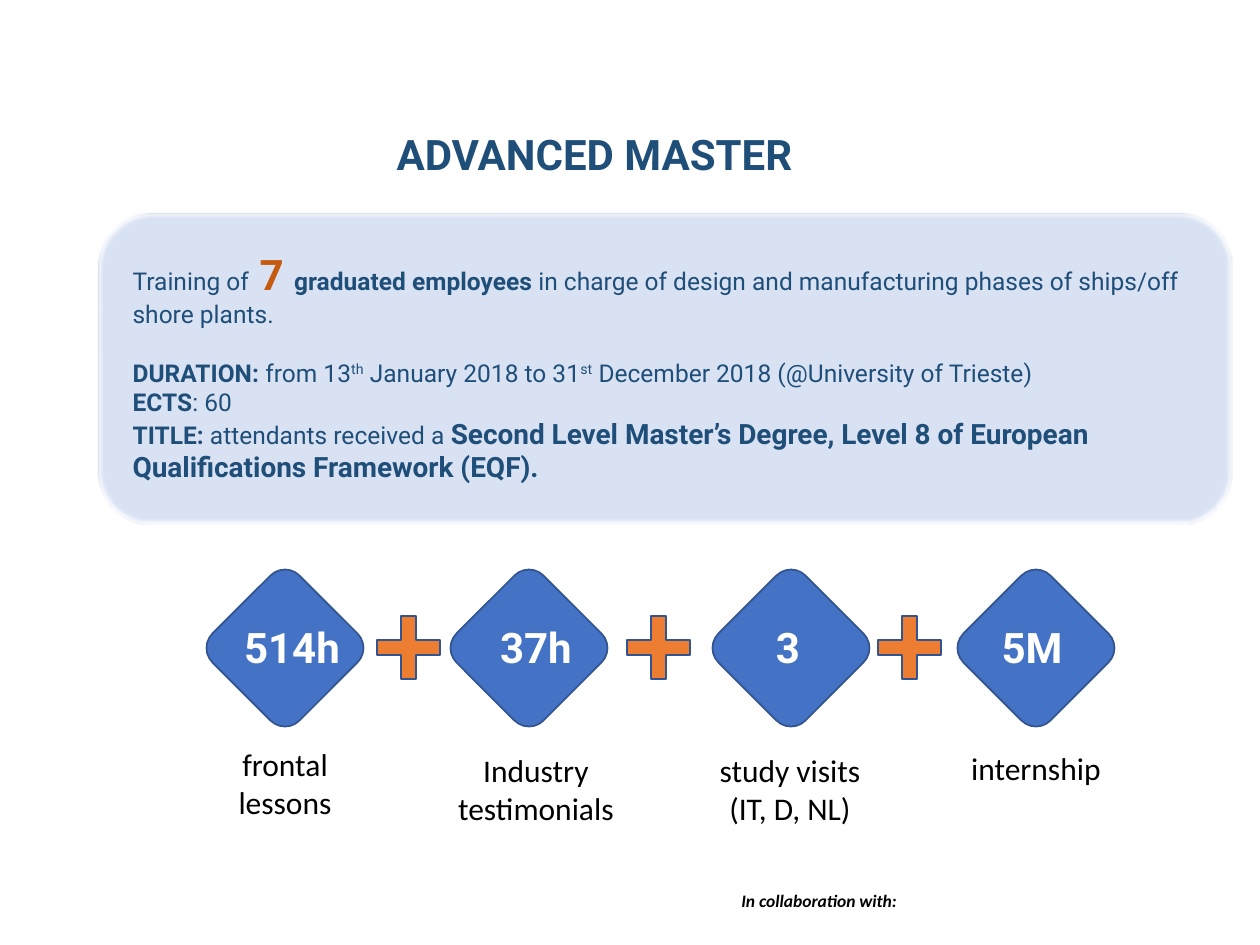
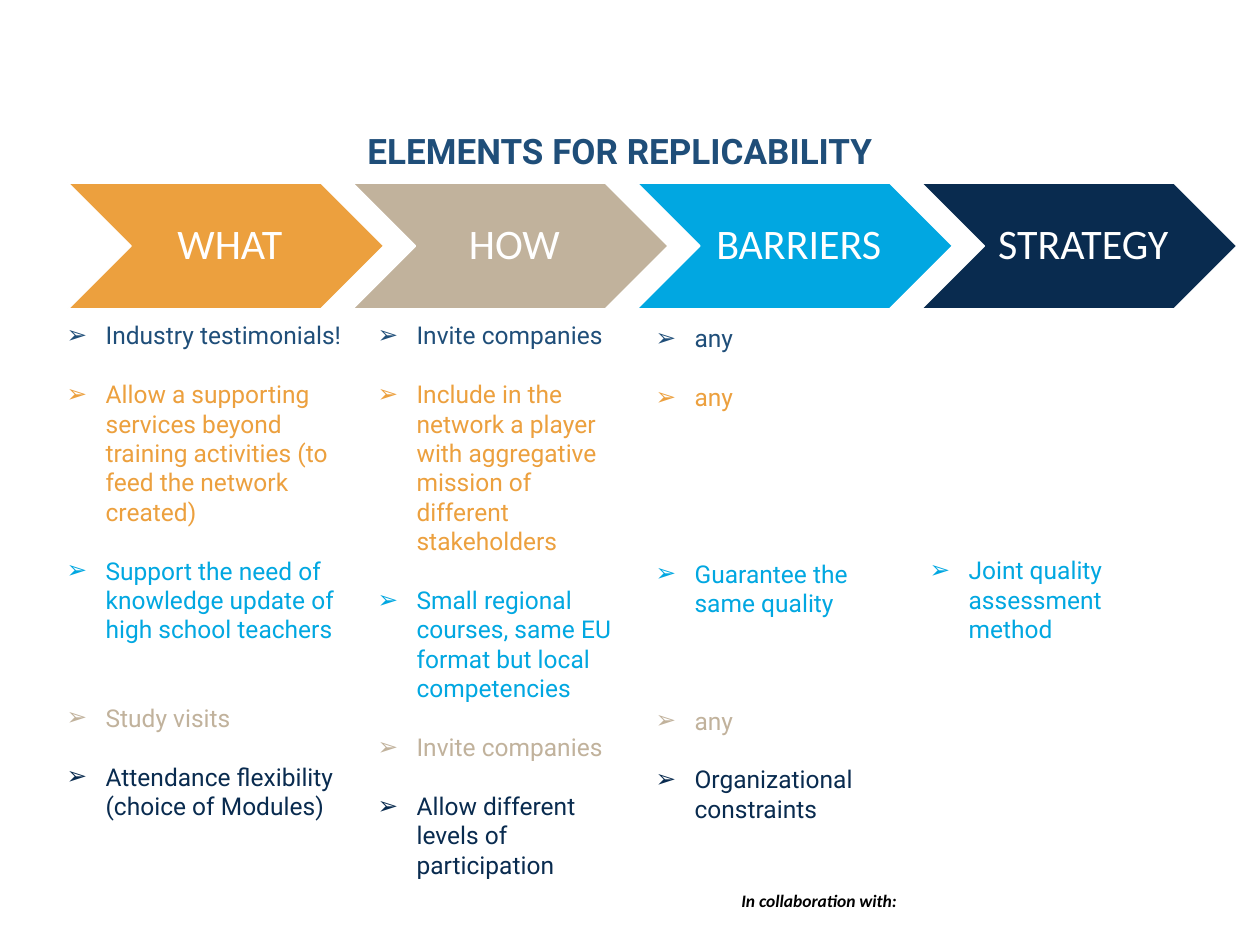
from lxml import etree
from pptx import Presentation
from pptx.dml.color import RGBColor
from pptx.enum.shapes import MSO_SHAPE
from pptx.enum.text import MSO_ANCHOR, MSO_AUTO_SIZE, PP_ALIGN
from pptx.oxml.ns import qn
from pptx.util import Emu, Inches, Pt

ROUNDED, CROSS, CHEVRON = MSO_SHAPE.ROUNDED_RECTANGLE, MSO_SHAPE.CROSS, MSO_SHAPE.CHEVRON
LEFT, CENTER = PP_ALIGN.LEFT, PP_ALIGN.CENTER
TOP, MIDDLE = MSO_ANCHOR.TOP, MSO_ANCHOR.MIDDLE
NO_AUTOFIT = MSO_AUTO_SIZE.NONE

HEADING_FONT, PLAIN_FONT = "Roboto", "Calibri"
BLUE_TEXT, BLUE, OUTLINE = "1F4E79", "4472C4", "325491"
PLUS_ORANGE, COUNT_ORANGE = "ED7D31", "C55A11"
AMBER, SAND, CYAN, NAVY = "ECA03E", "C1B29C", "01A7E1", "092B4F"
WHITE, BLACK = "FFFFFF", "000000"

LINE_HEIGHT = 16.8  # points, one line of 14 pt text
TITLE_AND_BODY, COMPARISON = 1, 4

# style: size, colour, bold
DETAIL_STYLES = {
    "plain": (14, BLUE_TEXT, False),
    "super": (14, BLUE_TEXT, False),
    "bold": (14, BLUE_TEXT, True),
    "large": (16, BLUE_TEXT, True),
    "count": (24, COUNT_ORANGE, True),
}

# blank lines above, then pieces of text with their style
COURSE_DETAILS = [
    (0, [("Training of", "plain"), (" 7 ", "count"), ("graduated employees ", "bold"),
         ("in charge of design and manufacturing phases of ships/off shore plants.",
          "plain")]),
    (1, [("DURATION: ", "bold"), ("from 13", "plain"), ("th", "super"),
         (" January 2018 to 31", "plain"), ("st", "super"),
         (" December 2018 (@University of Trieste)", "plain")]),
    (0, [("ECTS", "bold"), (": 60", "plain")]),
    (0, [("TITLE: ", "bold"), ("attendants received a ", "plain"),
         ("Second Level Master’s Degree, Level 8 of European "
          "Qualifications Framework (EQF).", "large")]),
]

# diamond centre, value, value centre, caption, caption centre, top and width
COURSE_PARTS = [
    (285, "514h", 292, "frontal lessons", 285, 739, 156),
    (529, "37h", 536, "Industry testimonials", 536, 745, 204),
    (791, "3", 788, "study visits (IT, D, NL)", 790, 745, 204),
    (1036, "5M", 1032, "internship", 1036, 743, 204),
]
PLUS_CENTRES = (408, 658, 909)

STEPS = [("WHAT", AMBER), ("HOW", SAND), ("BARRIERS", CYAN), ("STRATEGY", NAVY)]

# box, then items as (blank lines above, text, colour)
COLUMNS = [
    ((54, 314, 312, 518), [
        (0, "Industry testimonials!", BLUE_TEXT),
        (1, "Allow a supporting services beyond training activities "
            "(to feed the network created)", AMBER),
        (1, "Support the need of knowledge update of high school teachers", CYAN),
        (2, "Study visits", SAND),
        (1, "Attendance flexibility (choice of Modules)", NAVY)]),
    ((365, 314, 277, 547), [
        (0, "Invite companies", BLUE_TEXT),
        (1, "Include in the network a player with aggregative mission "
            "of different stakeholders", AMBER),
        (1, "Small regional courses, same EU format but local competencies", CYAN),
        (1, "Invite companies", SAND),
        (1, "Allow different levels of participation", NAVY)]),
    ((643, 317, 277, 518), [
        (0, "any", BLUE_TEXT),
        (1, "any", AMBER),
        (5, "Guarantee the same quality", CYAN),
        (3, "any", SAND),
        (1, "Organizational constraints", NAVY)]),
    ((917, 549, 277, 120), [
        (0, "Joint quality assessment method", CYAN)]),
]


def px(length):
    return Emu(round(length * 914400 / 126))


def color(value):
    return RGBColor.from_string(value)


def format_run(run, size, value, font=HEADING_FONT, bold=False, italic=False):
    run.font.name = font
    run.font.size = Pt(size)
    run.font.color.rgb = color(value)
    run.font.bold = bold
    run.font.italic = italic


def place(shape, box):
    shape.left, shape.top, shape.width, shape.height = map(px, box)


def add_label(slide, box, text, size, value, align=CENTER, **style):
    label = slide.shapes.add_textbox(*map(px, box))
    label.text_frame.word_wrap = True
    paragraph = label.text_frame.paragraphs[0]
    paragraph.text = text
    paragraph.alignment = align
    format_run(paragraph.runs[0], size, value, **style)


def add_filled(slide, kind, box, fill, line):
    shape = slide.shapes.add_shape(kind, *map(px, box))
    shape.shadow.inherit = False
    shape.fill.solid()
    shape.fill.fore_color.rgb = color(fill)
    shape.line.color.rgb = color(line)
    shape.line.width = Pt(1)
    return shape


def add_slide(presentation, layout, title, box, size, align):
    """Add a slide with its title and the shared footer."""
    slide = presentation.slides.add_slide(presentation.slide_layouts[layout])
    place(slide.shapes.title, box)
    frame = slide.shapes.title.text_frame
    frame.text = title
    frame.auto_size = NO_AUTOFIT
    frame.vertical_anchor = TOP
    frame.paragraphs[0].alignment = align
    format_run(frame.paragraphs[0].runs[0], size, BLUE_TEXT, bold=True)
    add_label(slide, (729, 884, 237, 34), "In collaboration with:", 10, BLACK,
              LEFT, font=PLAIN_FONT, bold=True, italic=True)
    return slide


def prepare_body(placeholder, box):
    place(placeholder, box)
    frame = placeholder.text_frame
    frame.auto_size = NO_AUTOFIT
    frame.vertical_anchor = TOP
    frame.word_wrap = True
    return frame


def add_body_paragraph(frame, index, blank_lines, indent, bullet):
    paragraph = frame.add_paragraph() if index else frame.paragraphs[0]
    properties = paragraph._p.get_or_add_pPr()
    properties.set("marL", str(px(indent)))
    properties.set("indent", str(-px(indent)))
    if bullet:
        etree.SubElement(properties, qn("a:buFont"), typeface="Arial")
        etree.SubElement(properties, qn("a:buChar"), char=bullet)
    else:
        etree.SubElement(properties, qn("a:buNone"))
    paragraph.space_before = Pt(blank_lines * LINE_HEIGHT)
    paragraph.alignment = LEFT
    return paragraph


def add_soft_panel(slide, box, behind):
    panel = add_filled(slide, ROUNDED, box, BLUE, OUTLINE)
    properties = panel.element.spPr
    fill = properties.find(qn("a:solidFill"))
    etree.SubElement(fill[0], qn("a:alpha"), val="20000")
    effects = properties.find(qn("a:effectLst"))
    etree.SubElement(effects, qn("a:softEdge"), rad=str(Pt(2.5)))
    behind.element.addprevious(panel.element)


def add_course_details(slide, box):
    left, top, width, height = box
    body = slide.placeholders[1]
    add_soft_panel(slide, box, body)
    frame = prepare_body(body, (left + 22, top + 29, width - 14, height - 31))
    for index, (blank_lines, pieces) in enumerate(COURSE_DETAILS):
        paragraph = add_body_paragraph(frame, index, blank_lines, 0, None)
        for text, style in pieces:
            run = paragraph.add_run()
            run.text = text
            size, value, bold = DETAIL_STYLES[style]
            format_run(run, size, value, bold=bold)
            if style == "super":
                run._r.get_or_add_rPr().set("baseline", "30000")


def add_course_parts(slide, middle):
    side = 123
    for (centre, value, value_centre,
         caption, caption_centre, caption_top, width) in COURSE_PARTS:
        box = (centre - side / 2, middle - side / 2, side, side)
        diamond = add_filled(slide, ROUNDED, box, BLUE, OUTLINE)
        diamond.rotation = 315
        add_label(slide, (value_centre - 70, middle - 33, 140, 63), value, 24,
                  WHITE, bold=True)
        add_label(slide, (caption_centre - width / 2, caption_top, width, 89),
                  caption, 18, BLACK, font=PLAIN_FONT)
    for centre in PLUS_CENTRES:
        plus = add_filled(slide, CROSS, (centre - 31, middle - 32, 63, 63),
                          PLUS_ORANGE, OUTLINE)
        plus.adjustments[0] = 0.38


def add_steps(slide, left, top):
    for index, (name, fill) in enumerate(STEPS):
        box = (left + 284.4 * index, top, 316, 126)
        chevron = add_filled(slide, CHEVRON, box, fill, WHITE)
        frame = chevron.text_frame
        frame.text = name
        frame.word_wrap = True
        frame.vertical_anchor = MIDDLE
        frame.margin_left = px(13)
        frame.margin_right = frame.margin_top = frame.margin_bottom = px(5)
        paragraph = frame.paragraphs[0]
        paragraph.alignment = CENTER
        paragraph.line_spacing = 0.9
        format_run(paragraph.runs[0], 24, WHITE, PLAIN_FONT)


def add_column(placeholder, box, items):
    frame = prepare_body(placeholder, box)
    for index, (blank_lines, text, value) in enumerate(items):
        paragraph = add_body_paragraph(frame, index, blank_lines, 39, "➢")
        paragraph.text = text
        format_run(paragraph.runs[0], 14, value)


def build_master_slide(presentation):
    slide = add_slide(presentation, TITLE_AND_BODY, "ADVANCED MASTER",
                      (384, 122, 570, 63), 24, LEFT)
    add_course_details(slide, (98, 213, 1134, 311))
    add_course_parts(slide, 648)


def build_replicability_slide(presentation):
    slide = add_slide(presentation, COMPARISON, "ELEMENTS FOR REPLICABILITY",
                      (278, 123, 684, 55), 20, CENTER)
    add_steps(slide, 68, 183)
    for index, (box, items) in enumerate(COLUMNS, start=1):
        add_column(slide.placeholders[index], box, items)


def main():
    presentation = Presentation()
    presentation.slide_width, presentation.slide_height = Inches(10), Inches(7.5)
    build_master_slide(presentation)
    build_replicability_slide(presentation)
    presentation.save("out.pptx")


if __name__ == "__main__":
    main()
